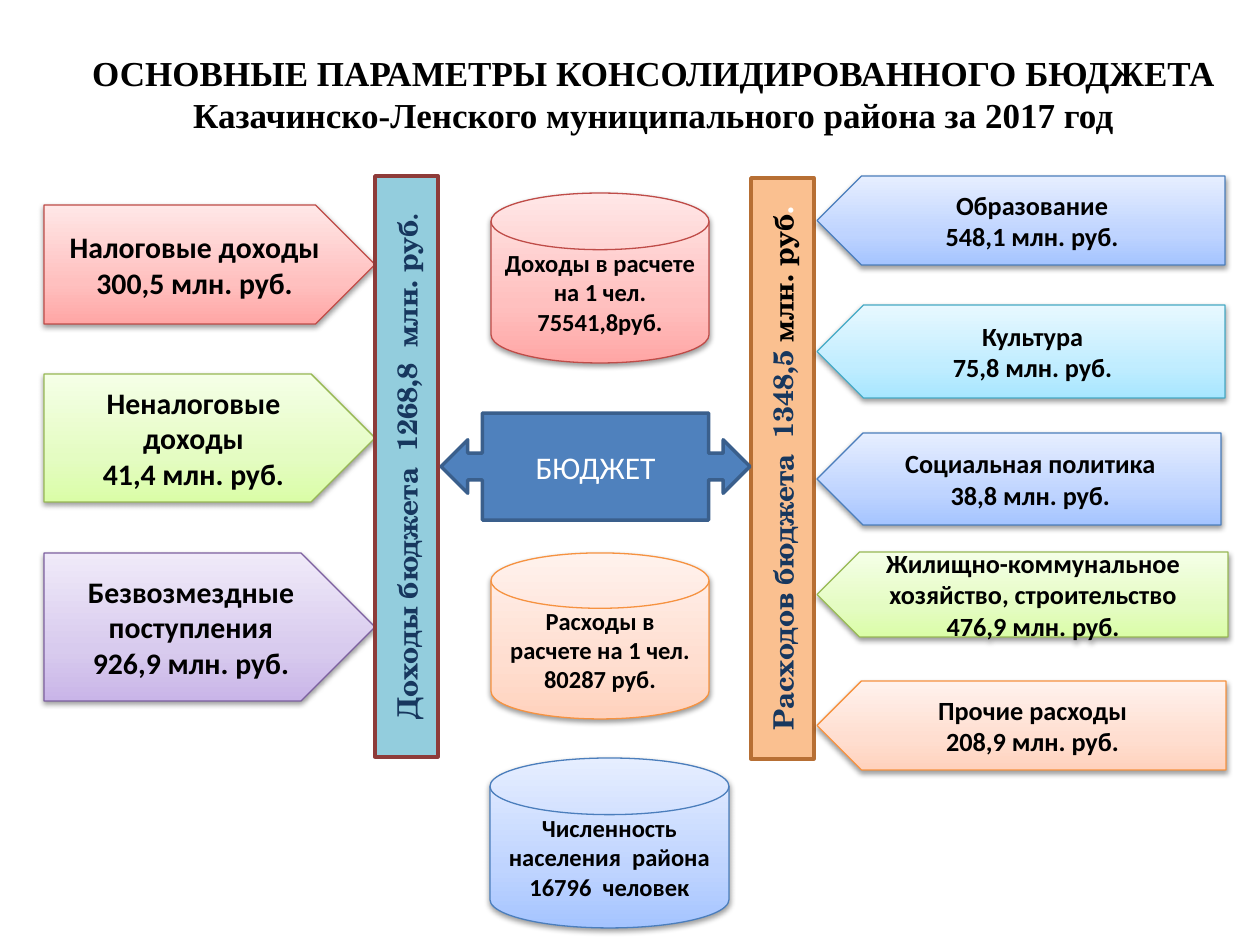
from copy import deepcopy
from dataclasses import dataclass

from lxml import etree
from pptx import Presentation
from pptx.dml.color import RGBColor
from pptx.enum.shapes import MSO_SHAPE
from pptx.enum.text import MSO_ANCHOR, PP_ALIGN
from pptx.oxml.ns import qn
from pptx.util import Emu, Pt

PENTAGON = MSO_SHAPE.PENTAGON
DISK = MSO_SHAPE.FLOWCHART_MAGNETIC_DISK
BAR = MSO_SHAPE.RECTANGLE
CALLOUT = MSO_SHAPE.LEFT_RIGHT_ARROW_CALLOUT
CENTER = PP_ALIGN.CENTER
MIDDLE = MSO_ANCHOR.MIDDLE
EMU_PER_PX = 914400 / 126


@dataclass(frozen=True)
class Theme:
    body_font: str = "Calibri"
    title_font: str = "Times New Roman"
    bar_font: str = "TeX Gyre Schola"
    black: str = "000000"
    white: str = "FFFFFF"
    navy: str = "17375E"
    # Gradient from bottom to top, then outline
    red: tuple = ("FFA6A5", "FFC0BF", "FFE7E7", "BF4C48")
    green: tuple = ("DAFDA7", "E4FCC2", "F5FFE7", "98B955")
    purple: tuple = ("C9B5E8", "D8CBEE", "F0EAF9", "7D60A0")
    orange: tuple = ("FFD2BD", "FFDED0", "FFF2ED", "F69240")
    blue: tuple = ("A4C4FF", "BFD4FF", "E6EEFF", "4B7EBC")
    aqua: tuple = ("A7E6FF", "C1EDFF", "E7F8FF", "46AAC5")
    # Solid fill, then outline
    income_bar: tuple = ("93CDDD", "8E3B39")
    spending_bar: tuple = ("FAC090", "B76F34")
    budget: tuple = ("4F81BD", "3A5F8C")
    title_size: int = 20
    budget_size: int = 18
    income_size: int = 17
    bar_size: int = 16
    spending_size: int = 15
    disk_size: int = 14
    thin: float = 0.75
    thick: float = 2


def px(length):
    return Emu(round(length * EMU_PER_PX))


def write(frame, text, *, size, font, color, bold=True):
    """Continue the last paragraph; each further line starts a new one."""
    for number, line in enumerate(text.split("\n")):
        paragraph = frame.add_paragraph() if number else frame.paragraphs[-1]
        paragraph.alignment = CENTER
        run = paragraph.add_run()
        run.text = line
        run.font.size = Pt(size)
        run.font.name = font
        run.font.bold = bold
        run.font.color.rgb = RGBColor.from_string(color)


class BudgetSlide:
    def __init__(self, slide, theme):
        self.slide = slide
        self.theme = theme

    def title(self, box, text):
        frame = self.slide.shapes.add_textbox(*map(px, box)).text_frame
        frame.word_wrap = True
        write(frame, text, size=self.theme.title_size,
              font=self.theme.title_font, color=self.theme.black)

    def outlined(self, kind, box, outline, width):
        shape = self.slide.shapes.add_shape(kind, *map(px, box))
        shape.shadow.inherit = False
        shape.line.color.rgb = RGBColor.from_string(outline)
        shape.line.width = Pt(width)
        shape.text_frame.word_wrap = True
        shape.text_frame.vertical_anchor = MIDDLE
        return shape

    def solid(self, kind, box, colors):
        fill, outline = colors
        shape = self.outlined(kind, box, outline, self.theme.thick)
        shape.fill.solid()
        shape.fill.fore_color.rgb = RGBColor.from_string(fill)
        return shape

    def glossy(self, kind, box, colors, text, size, mirrored=False):
        *shades, outline = colors
        shape = self.outlined(kind, box, outline, self.theme.thin)
        properties = shape._element.spPr
        # Three-stop gradient, light at the top
        shape.fill.gradient()
        shape.fill.gradient_angle = 90
        stop_list = properties.find(qn("a:gradFill")).find(qn("a:gsLst"))
        stop_list.append(deepcopy(stop_list[0]))
        for stop, shade, position in zip(shape.fill.gradient_stops, shades, (0, 0.35, 1)):
            stop.color.rgb = RGBColor.from_string(shade)
            stop.position = position
        # Soft shadow below
        shadow = etree.SubElement(
            properties.find(qn("a:effectLst")), qn("a:outerShdw"),
            blurRad="40000", dist="20000", dir="5400000", rotWithShape="0")
        tint = etree.SubElement(shadow, qn("a:srgbClr"), val=self.theme.black)
        etree.SubElement(tint, qn("a:alpha"), val="38000")
        if mirrored:
            properties.find(qn("a:xfrm")).set("flipH", "1")
        write(shape.text_frame, text, size=size,
              font=self.theme.body_font, color=self.theme.black)

    def total_bar(self, box, colors, runs):
        frame = self.solid(BAR, box, colors).text_frame
        frame._txBody.bodyPr.set("vert", "vert270")
        for text, color, font, size in runs:
            write(frame, text, size=size, font=font, color=color)

    def budget_callout(self, box, text):
        shape = self.solid(CALLOUT, box, self.theme.budget)
        shape.adjustments[3] = 0.732
        write(shape.text_frame, text, size=self.theme.budget_size,
              font=self.theme.body_font, color=self.theme.white, bold=False)


def main():
    theme = Theme()
    deck = Presentation()
    deck.slide_width, deck.slide_height = px(1260), px(945)
    page = BudgetSlide(deck.slides.add_slide(deck.slide_layouts[6]), theme)

    page.title((63, 45, 1181, 97),
               "ОСНОВНЫЕ ПАРАМЕТРЫ КОНСОЛИДИРОВАННОГО БЮДЖЕТА\n"
               "Казачинско-Ленского муниципального района за 2017 год")

    # Income sources
    for top, height, colors, text in (
        (205, 119, theme.red, "Налоговые доходы\n300,5 млн. руб."),
        (374, 128, theme.green, "Неналоговые доходы\n41,4 млн. руб."),
        (553, 148, theme.purple, "Безвозмездные поступления\n926,9 млн. руб."),
    ):
        page.glossy(PENTAGON, (44, top, 331, height), colors, text, theme.income_size)

    # Per-person figures and population
    for box, colors, text in (
        ((491, 193, 218, 170), theme.red, "Доходы в расчете\nна 1 чел.\n75541,8руб."),
        ((491, 553, 218, 166), theme.orange, "Расходы в расчете на 1 чел.\n80287 руб."),
        ((490, 758, 239, 170), theme.blue, "Численность населения  района\n16796  человек"),
    ):
        page.glossy(DISK, box, colors, text, theme.disk_size)

    # Totals
    schola = (theme.bar_font, theme.bar_size)
    page.total_bar((375, 176, 63, 581), theme.income_bar, (
        ("Доходы бюджета  1268,8  млн. руб", theme.navy, *schola),
        (".", theme.navy, theme.title_font, theme.spending_size),
    ))
    page.total_bar((751, 178, 63, 581), theme.spending_bar, (
        ("Расходов бюджета  1348,5 ", theme.navy, *schola),
        ("млн. руб", theme.black, *schola),
        (".", theme.white, *schola),
    ))
    page.budget_callout((441, 413, 309, 107), "БЮДЖЕТ")

    # Spending areas
    for top, width, height, colors, text in (
        (176, 408, 89, theme.blue, "Образование\n548,1 млн. руб."),
        (305, 408, 93, theme.aqua, "Культура\n75,8 млн. руб."),
        (433, 404, 92, theme.blue, "Социальная политика\n38,8 млн. руб."),
        (552, 411, 85, theme.green,
         "Жилищно-коммунальное хозяйство, строительство\n476,9 млн. руб."),
        (681, 409, 89, theme.orange, "Прочие расходы\n208,9 млн. руб."),
    ):
        page.glossy(PENTAGON, (817, top, width, height), colors, text,
                    theme.spending_size, mirrored=True)

    deck.save("out.pptx")


if __name__ == "__main__":
    main()
